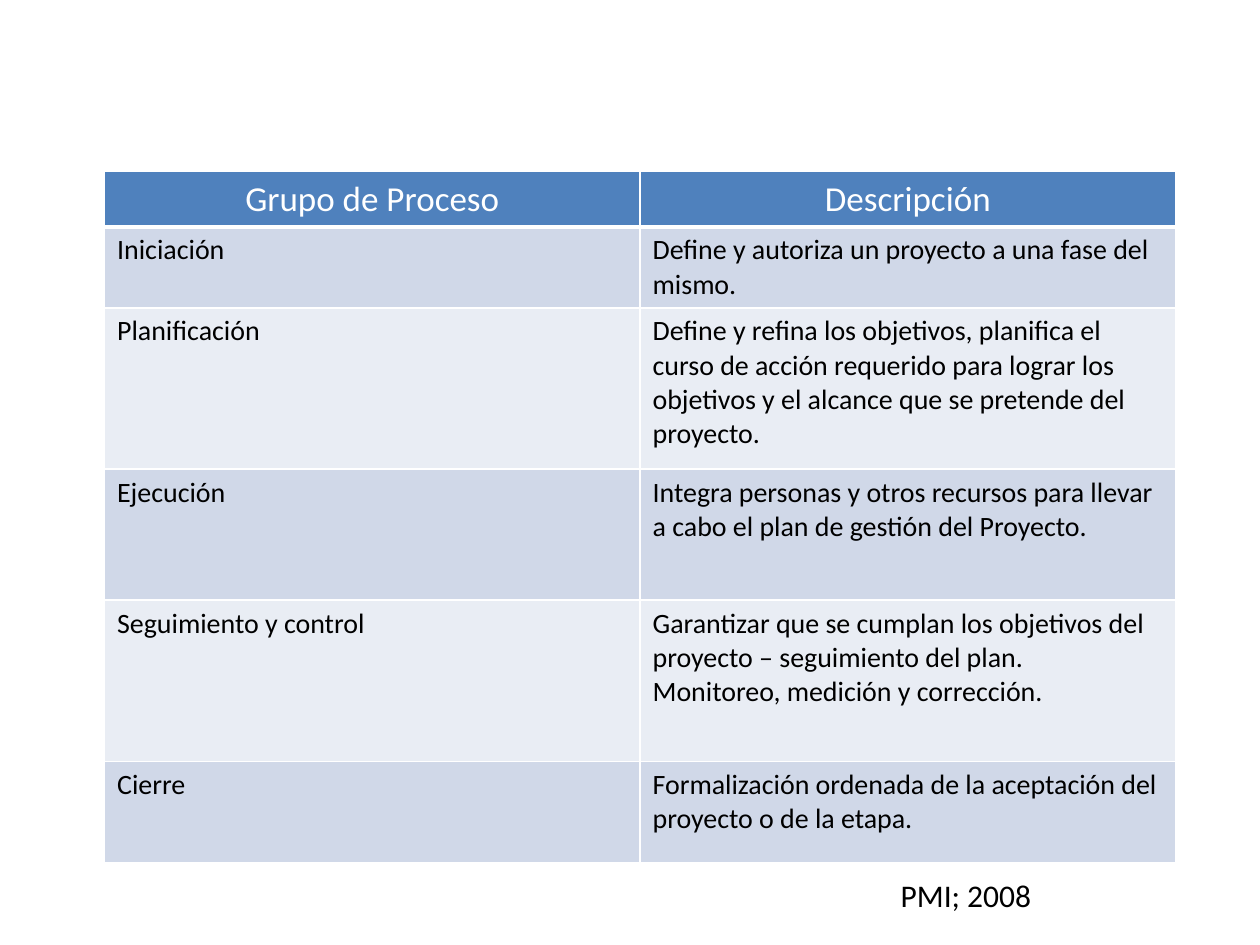
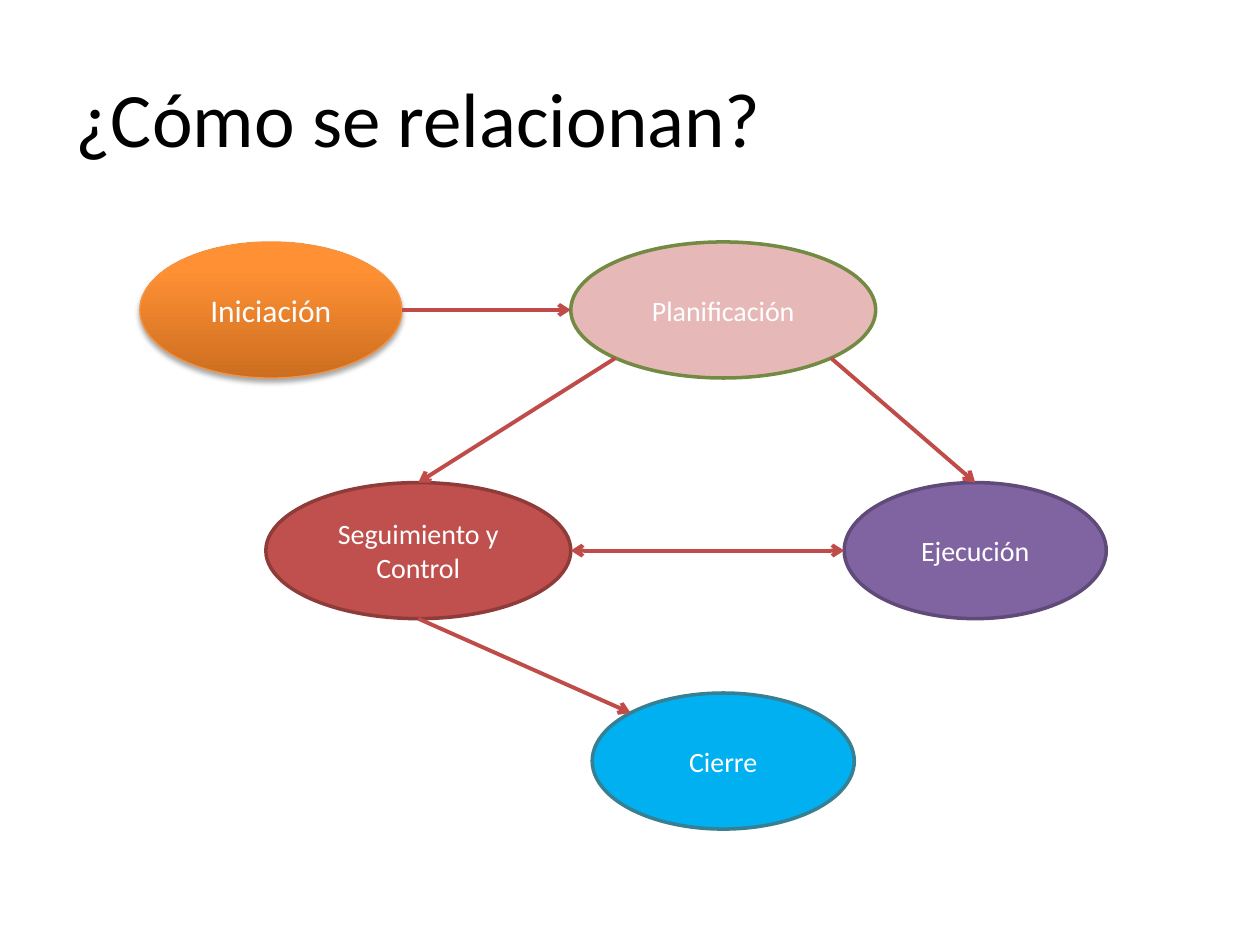
from copy import deepcopy
from dataclasses import dataclass
from math import cos, radians, sin

from lxml import etree
from pptx import Presentation
from pptx.dml.color import RGBColor
from pptx.enum import shapes, text
from pptx.oxml.ns import qn
from pptx.util import Inches, Pt

FONT = "Calibri"
BLACK, WHITE = "000000", "FFFFFF"
HEADER_FILL, BAND_FILLS = "4F81BD", ("D0D8E8", "E9EDF4")
ARROW_COLOR = "BF4C48"
START_GRADIENT = ((0, "CC6E20"), (80, "FF9034"), (100, "FF9136"))

PROCESS_GROUPS = (
    (0.62, "Iniciación", ("Define y autoriza un proyecto a una fase del mismo.",)),
    (1.28, "Planificación", (
        "Define y refina los objetivos, planifica el curso de acción requerido para "
        "lograr los objetivos y el alcance que se pretende del proyecto.",)),
    (1.04, "Ejecución", (
        "Integra personas y otros recursos para llevar a cabo el plan de gestión del Proyecto.",)),
    (1.28, "Seguimiento y control", (
        "Garantizar que se cumplan los objetivos del proyecto – seguimiento del plan.",
        "Monitoreo, medición y corrección.")),
    (0.8, "Cierre", ("Formalización ordenada de la aceptación del proyecto o de la etapa.",)),
)


@dataclass(frozen=True)
class Phase:
    label: str
    center_x: float
    center_y: float
    width: float
    fill: str
    line: str
    line_width: float = 2
    size: int = 16
    height: float = 1.08

    def rim(self, angle: float) -> tuple[float, float]:
        """Point on the ellipse, in degrees clockwise from the right end."""
        turn = radians(angle)
        return (self.center_x + self.width / 2 * cos(turn),
                self.center_y + self.height / 2 * sin(turn))


@dataclass(frozen=True)
class Arrow:
    source: Phase
    source_angle: float
    target: Phase
    target_angle: float
    both_ways: bool = False


START = Phase("Iniciación", 2.15, 2.46, 2.08, "FF9034", "F69240", 0.75, 18)
PLANNING = Phase("Planificación", 5.74, 2.46, 2.42, "E6B9B8", "738A42")
CONTROL = Phase("Seguimiento y Control", 3.32, 4.37, 2.42, "C0504D", "8E3B39")
EXECUTION = Phase("Ejecución", 7.74, 4.37, 2.08, "8064A2", "5F4A78")
CLOSING = Phase("Cierre", 5.74, 6.04, 2.08, "00B0F0", "377F92")

ARROWS = (
    Arrow(START, 0, PLANNING, 180),
    Arrow(PLANNING, 135, CONTROL, 270),
    Arrow(PLANNING, 45, EXECUTION, 270),
    Arrow(CONTROL, 90, CLOSING, 225),
    Arrow(CONTROL, 0, EXECUTION, 180, both_ways=True),
)


def rgb(color: str) -> RGBColor:
    return RGBColor.from_string(color)


def write(frame, lines: tuple[str, ...], size: int, color: str, align=None) -> None:
    frame.word_wrap = True
    for index, line in enumerate(lines):
        paragraph = frame.add_paragraph() if index else frame.paragraphs[0]
        paragraph.alignment = align
        run = paragraph.add_run()
        run.text = line
        run.font.name = FONT
        run.font.size = Pt(size)
        run.font.color.rgb = rgb(color)


def add_text(slide, box: tuple[float, ...], line: str, size: int,
             anchor=text.MSO_ANCHOR.TOP) -> None:
    frame = slide.shapes.add_textbox(*map(Inches, box)).text_frame
    frame.vertical_anchor = anchor
    write(frame, (line,), size, BLACK)


def add_border(cell, side: str, width: float) -> None:
    properties = cell._tc.get_or_add_tcPr()
    border = etree.SubElement(properties, qn(f"a:ln{side}"), w=str(Pt(width)))
    solid = etree.SubElement(border, qn("a:solidFill"))
    etree.SubElement(solid, qn("a:srgbClr"), val=WHITE)


def fill_cell(cell, lines: tuple[str, ...], size: int, color: str, fill: str,
              align=None, bottom: float = 1) -> None:
    write(cell.text_frame, lines, size, color, align)
    for side, width in zip("LRTB", (1, 1, 1, bottom)):
        add_border(cell, side, width)
    cell.fill.solid()
    cell.fill.fore_color.rgb = rgb(fill)


def add_process_table(slide) -> None:
    heights = (0.42, *(height for height, *_ in PROCESS_GROUPS))
    frame = slide.shapes.add_table(len(heights), 2, Inches(0.83), Inches(1.36),
                                   Inches(8.5), Inches(sum(heights)))
    table = frame.table
    for row, height in zip(table.rows, heights):
        row.height = Inches(height)
    for column, heading in enumerate(("Grupo de Proceso", "Descripción")):
        fill_cell(table.cell(0, column), (heading,), 20, WHITE, HEADER_FILL,
                  text.PP_ALIGN.CENTER, bottom=3)
    for index, (_, name, description) in enumerate(PROCESS_GROUPS):
        for column, lines in enumerate(((name,), description)):
            fill_cell(table.cell(index + 1, column), lines, 16, BLACK, BAND_FILLS[index % 2])


def add_phase(slide, phase: Phase):
    shape = slide.shapes.add_shape(
        shapes.MSO_SHAPE.OVAL,
        Inches(phase.center_x - phase.width / 2), Inches(phase.center_y - phase.height / 2),
        Inches(phase.width), Inches(phase.height))
    shape.shadow.inherit = False
    shape.fill.solid()
    shape.fill.fore_color.rgb = rgb(phase.fill)
    shape.line.color.rgb = rgb(phase.line)
    shape.line.width = Pt(phase.line_width)
    shape.text_frame.vertical_anchor = text.MSO_ANCHOR.MIDDLE
    write(shape.text_frame, (phase.label,), phase.size, WHITE, text.PP_ALIGN.CENTER)
    return shape


def add_relief(shape) -> None:
    """Give the shape the vertical gradient and a soft shadow below."""
    shape.fill.gradient()
    shape.fill.gradient_angle = 90
    properties = shape._element.spPr
    stop_list = properties.find(f".//{qn('a:gsLst')}")
    stop_list.append(deepcopy(stop_list[-1]))
    for stop, (position, color) in zip(shape.fill.gradient_stops, START_GRADIENT):
        stop.position = position / 100
        stop.color.rgb = rgb(color)
    shadow = etree.SubElement(
        properties.find(qn("a:effectLst")), qn("a:outerShdw"), blurRad=str(Pt(3.1)),
        dist=str(Pt(1.8)), dir=str(90 * 60000), rotWithShape="0")
    shade = etree.SubElement(shadow, qn("a:srgbClr"), val=BLACK)
    etree.SubElement(shade, qn("a:alpha"), val="35000")


def add_arrow(slide, arrow: Arrow) -> None:
    ends = (*arrow.source.rim(arrow.source_angle), *arrow.target.rim(arrow.target_angle))
    connector = slide.shapes.add_connector(shapes.MSO_CONNECTOR.STRAIGHT, *map(Inches, ends))
    connector.line.color.rgb = rgb(ARROW_COLOR)
    connector.line.width = Pt(2.25)
    properties = connector._element.spPr
    line = properties.find(qn("a:ln"))
    for end in ("headEnd", "tailEnd") if arrow.both_ways else ("tailEnd",):
        etree.SubElement(line, qn(f"a:{end}"), type="arrow")
    etree.SubElement(properties, qn("a:effectLst"))


def build_groups_slide(slide) -> None:
    add_process_table(slide)
    add_text(slide, (7.05, 6.9, 2, 0.4), "PMI; 2008", 18)


def build_relations_slide(slide) -> None:
    add_text(slide, (0.5, 0.3, 9, 1.25), "¿Cómo se relacionan?", 44, text.MSO_ANCHOR.MIDDLE)
    add_relief(add_phase(slide, START))
    for phase in (PLANNING, CONTROL, EXECUTION, CLOSING):
        add_phase(slide, phase)
    for arrow in ARROWS:
        add_arrow(slide, arrow)


def main() -> None:
    presentation = Presentation()
    presentation.slide_width, presentation.slide_height = Inches(10), Inches(7.5)
    blank = presentation.slide_layouts[6]
    for build in (build_groups_slide, build_relations_slide):
        build(presentation.slides.add_slide(blank))
    presentation.save("out.pptx")


if __name__ == "__main__":
    main()
